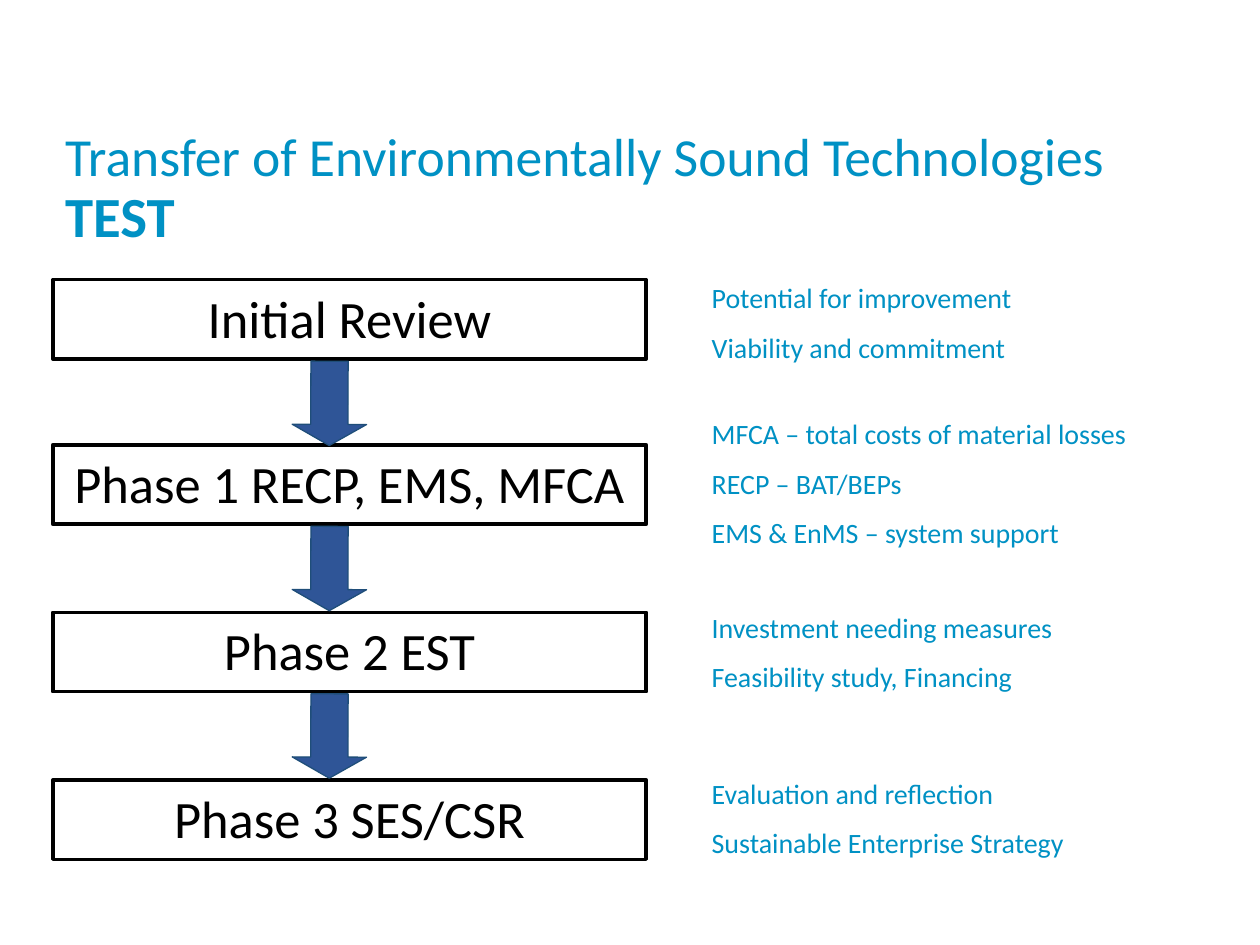
from dataclasses import dataclass

from pptx import Presentation
from pptx.dml.color import RGBColor
from pptx.enum.shapes import MSO_SHAPE
from pptx.enum.text import MSO_ANCHOR, PP_ALIGN
from pptx.util import Pt

RECT, DOWN = MSO_SHAPE.RECTANGLE, MSO_SHAPE.DOWN_ARROW
TOP, BOTTOM = MSO_ANCHOR.TOP, MSO_ANCHOR.BOTTOM
LEFT, CENTER = PP_ALIGN.LEFT, PP_ALIGN.CENTER

WHITE = RGBColor(0xFF, 0xFF, 0xFF)
BLACK = RGBColor(0x00, 0x00, 0x00)
CYAN = RGBColor(0x00, 0x91, 0xC4)
BLUE = RGBColor(0x2F, 0x55, 0x97)
NAVY = RGBColor(0x1F, 0x4E, 0x79)
FONT = "Calibri"


@dataclass
class Phase:
    label: str
    top: float
    gap: float  # space above the first note
    notes: tuple[str, ...]


PHASES = [
    Phase("Initial Review", 159.8, 0,
          ("Potential for improvement", "Viability and commitment")),
    Phase("Phase 1 RECP, EMS, MFCA", 254.2, 24.2,
          ("MFCA – total costs of material losses", "RECP – BAT/BEPs",
           "EMS & EnMS – system support")),
    Phase("Phase 2 EST", 349.9, 29.1,
          ("Investment needing measures", "Feasibility study, Financing")),
    Phase("Phase 3 SES/CSR", 445.7, 41.3,
          ("Evaluation and reflection", "Sustainable Enterprise Strategy")),
]


def add_run(para, text: str, size: float, color: RGBColor, bold: bool = False) -> None:
    run = para.add_run()
    run.text = text
    font = run.font
    font.name, font.size, font.bold = FONT, Pt(size), bold
    font.color.rgb = color


def add_form(slide, kind, x: float, y: float, w: float, h: float,
             fill: RGBColor, line: RGBColor, width: float):
    form = slide.shapes.add_shape(kind, Pt(x), Pt(y), Pt(w), Pt(h))
    form.shadow.inherit = False
    form.fill.solid()
    form.fill.fore_color.rgb = fill
    form.line.color.rgb = line
    form.line.width = Pt(width)
    return form


def add_box(slide, phase: Phase) -> None:
    box = add_form(slide, RECT, 30.2, phase.top, 339.1, 45.4, WHITE, BLACK, 2)
    frame = box.text_frame
    frame.word_wrap = True
    frame.vertical_anchor = TOP
    para = frame.paragraphs[0]
    para.alignment = CENTER
    add_run(para, phase.label, 30, BLACK)


def add_arrow(slide, phase: Phase) -> None:
    arrow = add_form(slide, DOWN, 167, phase.top + 46.6, 42.5, 48.2, BLUE, NAVY, 0.75)
    arrow.adjustments[0] = 0.5
    arrow.adjustments[1] = 0.284
    arrow.rotation = 0.2


def add_frame(slide, x: float, y: float, w: float, h: float, anchor):
    frame = slide.shapes.add_textbox(Pt(x), Pt(y), Pt(w), Pt(h)).text_frame
    frame.word_wrap = True
    frame.vertical_anchor = anchor
    return frame


def add_title(slide) -> None:
    para = add_frame(slide, 30.2, 71.3, 652.3, 74.9, BOTTOM).paragraphs[0]
    para.alignment = LEFT
    para.line_spacing = 0.9
    add_run(para, "Transfer of Environmentally Sound Technologies", 30.6, CYAN)
    para.add_line_break()
    add_run(para, "TEST", 32.4, CYAN, True)


def add_notes(slide) -> None:
    frame = add_frame(slide, 399.6, 157, 265, 339.8, TOP)
    para = frame.paragraphs[0]
    for phase in PHASES:
        for i, note in enumerate(phase.notes):
            if phase is not PHASES[0] or i:
                para = frame.add_paragraph()
            para.space_before = Pt(3 if i else phase.gap)
            para.space_after = Pt(6)
            add_run(para, note, 16, CYAN)


def main() -> None:
    deck = Presentation()
    deck.slide_width, deck.slide_height = Pt(720), Pt(540)
    slide = deck.slides.add_slide(deck.slide_layouts[6])

    # Phases, top to bottom
    for phase in PHASES:
        add_box(slide, phase)
    for phase in PHASES[:-1]:
        add_arrow(slide, phase)

    # Title and side notes
    add_title(slide)
    add_notes(slide)
    deck.save("out.pptx")


if __name__ == "__main__":
    main()
